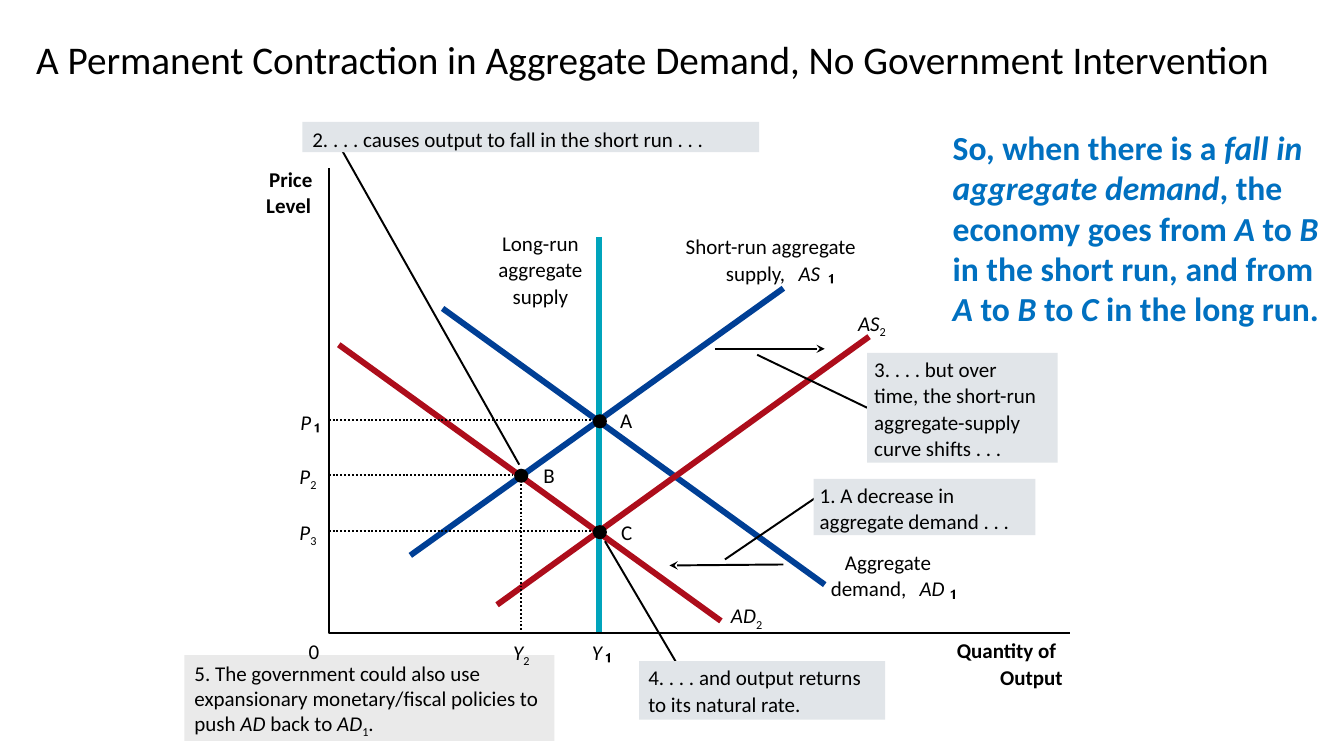
from lxml import etree
from pptx import Presentation
from pptx.dml.color import RGBColor
from pptx.enum.dml import MSO_LINE
from pptx.enum.shapes import MSO_CONNECTOR, MSO_SHAPE
from pptx.enum.text import MSO_ANCHOR, MSO_AUTO_SIZE, PP_ALIGN
from pptx.oxml.ns import qn
from pptx.util import Inches, Pt

BLACK, TEAL, BLUE, RED = "000000", "00A4BC", "003F95", "AD0D1B"
GREY, LIGHT_GREY, BRIGHT_BLUE = "E1E5E9", "EAEAEA", "0070C0"
AXIS_X, AXIS_Y = 3.26, 6.28
LINE_STEP = 19
CURVE_WIDTH = 4.25


def color(hex_string):
    return RGBColor.from_string(hex_string)


class Diagram:
    font_name = "Calibri"
    font_size = 15
    line_width = 1.38

    def __init__(self, slide):
        self.slide = slide

    def add_lines(self, frame, lines, size=font_size, text_color=BLACK, bold=False,
                  spacing=None, align=PP_ALIGN.LEFT):
        """Fill the frame; each line is a string or a list of (text, style), style "", "i" or "sub"."""
        for index, line in enumerate(lines):
            paragraph = frame.paragraphs[0] if index == 0 else frame.add_paragraph()
            paragraph.alignment = align
            if spacing:
                paragraph.line_spacing = spacing
            for text, style in [(line, "")] if isinstance(line, str) else line:
                run = paragraph.add_run()
                run.text = text
                run.font.name = self.font_name
                run.font.size = Pt(size)
                run.font.bold = bold
                run.font.italic = style == "i"
                run.font.color.rgb = color(text_color)
                if style == "sub":
                    run._r.get_or_add_rPr().set("baseline", "-25000")

    def text_box(self, left, top, width, height, lines, anchor=MSO_ANCHOR.TOP, **style):
        shape = self.slide.shapes.add_textbox(*map(Inches, (left, top, width, height)))
        frame = shape.text_frame
        frame.word_wrap = True
        frame.vertical_anchor = anchor
        self.add_lines(frame, lines, **style)

    def label(self, left, top, width, *lines, **style):
        """Unwrapped text without margins."""
        shape = self.slide.shapes.add_textbox(
            Inches(left), Inches(top), Inches(width), Inches(0.25 * len(lines)))
        frame = shape.text_frame
        frame.margin_left = frame.margin_top = frame.margin_right = frame.margin_bottom = 0
        frame.word_wrap = False
        frame.auto_size = MSO_AUTO_SIZE.SHAPE_TO_FIT_TEXT
        self.add_lines(frame, lines, **style)

    def line(self, start, end, line_color=BLACK, width=line_width, dotted=False, arrow=False):
        connector = self.slide.shapes.add_connector(
            MSO_CONNECTOR.STRAIGHT, *map(Inches, (*start, *end)))
        connector.line.color.rgb = color(line_color)
        connector.line.width = Pt(width)
        if dotted:
            connector.line.dash_style = MSO_LINE.ROUND_DOT
        if arrow:
            outline = connector._element.spPr.find(qn("a:ln"))
            etree.SubElement(outline, qn("a:tailEnd"), type="stealth")
        etree.SubElement(connector._element.spPr, qn("a:effectLst"))
        return connector

    def outline(self, points, closed=False):
        points = [(Inches(x), Inches(y)) for x, y in points]
        builder = self.slide.shapes.build_freeform(*points[0], scale=1.0)
        builder.add_line_segments(points[1:], close=closed)
        shape = builder.convert_to_shape()
        shape.shadow.inherit = False
        return shape

    def path_line(self, points, dotted=False):
        shape = self.outline(points)
        shape.fill.background()
        shape.line.color.rgb = color(BLACK)
        shape.line.width = Pt(self.line_width)
        if dotted:
            shape.line.dash_style = MSO_LINE.ROUND_DOT

    def subscript_one(self, left, top):
        """Small drawn numeral 1 used as a subscript."""
        numeral = [(0.04, 0), (0.03, 0), (0.02, 0.01), (0, 0.02), (0, 0.03),
                   (0.01, 0.03), (0.02, 0.02), (0.02, 0.09), (0.04, 0.09)]
        shape = self.outline([(left + x, top + y) for x, y in numeral], closed=True)
        shape.fill.solid()
        shape.fill.fore_color.rgb = color(BLACK)
        shape.line.fill.background()

    def filled(self, preset, left, top, width, height, fill):
        shape = self.slide.shapes.add_shape(preset, *map(Inches, (left, top, width, height)))
        shape.shadow.inherit = False
        shape.fill.solid()
        shape.fill.fore_color.rgb = color(fill)
        shape.line.fill.background()
        return shape

    def note(self, box, lines, fill=GREY, inset=(0.1, 0.05), spacing=None):
        shape = self.filled(MSO_SHAPE.RECTANGLE, *box, fill)
        frame = shape.text_frame
        frame.word_wrap = True
        frame.vertical_anchor = MSO_ANCHOR.TOP
        frame.margin_left, frame.margin_top = map(Inches, inset)
        frame.margin_bottom = 0
        self.add_lines(frame, lines, spacing=spacing)
        return shape

    def callout(self, box, lines, start, end, inset, joined_side=None):
        pointer = self.line(start, end)
        shape = self.note(box, lines, inset=inset, spacing=Pt(LINE_STEP))
        if joined_side is not None:
            pointer.begin_connect(shape, joined_side)

    def equilibrium(self, name, x, y, name_left, name_top):
        self.filled(MSO_SHAPE.OVAL, x - 0.07, y - 0.07, 0.14, 0.14, BLACK)
        self.label(name_left, name_top, 0.12, name)


def main():
    presentation = Presentation()
    presentation.slide_width, presentation.slide_height = Inches(13.33), Inches(7.5)
    diagram = Diagram(presentation.slides.add_slide(presentation.slide_layouts[6]))

    diagram.note((1.83, 6.5, 3.67, 0.85), [[
        ("5. The government could also use expansionary monetary/fiscal policies to push ", ""),
        ("AD", "i"), (" back to ", ""), ("AD", "i"), ("1", "sub"), (".", "")]], fill=LIGHT_GREY)
    diagram.text_box(
        0.26, 0.25, 12.87, 0.75,
        ["A Permanent Contraction in Aggregate Demand, No Government Intervention"],
        anchor=MSO_ANCHOR.MIDDLE, size=28, spacing=0.8)

    # Axes
    diagram.line((5.94, 2.35), (5.94, AXIS_Y), TEAL, CURVE_WIDTH)
    diagram.path_line([(AXIS_X, 1.67), (AXIS_X, AXIS_Y), (10.61, AXIS_Y)])
    for left, top, width, text in [
            (9.49, 6.32, 1, "Quantity of"), (9.92, 6.59, 0.63, "Output"),
            (2.67, 1.65, 0.43, "Price"), (2.64, 1.91, 0.45, "Level")]:
        diagram.label(left, top, width, text, bold=True)
    diagram.label(3.06, 6.33, 0.11, "0")

    # Curves and shift arrows
    for start, end, curve_color in [
            ((4.07, 5.51), (7.77, 2.86), BLUE), ((8.18, 5.8), (4.39, 3.06), BLUE),
            ((7.15, 6.16), (3.36, 3.42), RED), ((4.93, 6), (8.62, 3.34), RED)]:
        diagram.line(start, end, curve_color, CURVE_WIDTH)
    diagram.line((7.09, 3.46), (8.18, 3.46), arrow=True)
    diagram.line((7.77, 5.6), (6.64, 5.61), arrow=True)

    # Curve names
    diagram.label(4.94, 2.27, 0.84, "Long-run", "aggregate", "supply",
                  spacing=Pt(LINE_STEP), align=PP_ALIGN.CENTER)
    for left, top, width, text in [
            (6.8, 2.32, 1.71, "Short-run aggregate"), (7.2, 2.58, 0.64, "supply,"),
            (8.38, 5.45, 0.86, "Aggregate"), (8.24, 5.71, 0.8, "demand,")]:
        diagram.label(left, top, width, text)

    # Symbols with a drawn subscript, then symbols with a typed one
    for left, top, width, symbol, one_left, one_top in [
            (7.92, 2.58, 0.22, "AS", 8.22, 2.72), (9.12, 5.71, 0.25, "AD", 9.43, 5.85),
            (2.98, 4.06, 0.11, "P", 3.12, 4.2), (5.87, 6.34, 0.1, "Y", 6.01, 6.48)]:
        diagram.label(left, top, width, [(symbol, "i")])
        diagram.subscript_one(one_left, one_top)
    for left, top, width, symbol, number in [
            (7.25, 5.98, 0.32, "AD", "2"), (8.51, 3.08, 0.29, "AS", "2"),
            (2.97, 4.6, 0.18, "P", "2"), (2.97, 5.15, 0.18, "P", "3"),
            (5.09, 6.34, 0.17, "Y", "2")]:
        diagram.label(left, top, width, [(symbol, "i"), (number, "sub")])

    # Guides and callouts
    for price in (4.17, 5.27):
        diagram.line((AXIS_X, price), (5.94, price), dotted=True)
    diagram.path_line([(AXIS_X, 4.71), (5.17, 4.71), (5.17, AXIS_Y)], dotted=True)
    diagram.callout((8.07, 4.75, 2.2, 0.56), ["1. A decrease in", "aggregate demand . . ."],
                    (8.13, 4.91), (7.19, 5.55), (0.06, 0.02))
    diagram.callout((3, 1.21, 4.53, 0.3),
                    ["2. . . . causes output to fall in the short run . . ."],
                    (3.38, 1.47), (5.15, 4.61), (0.1, 0.03))
    diagram.callout((8.6, 3.5, 1.89, 1.09),
                    ["3. . . . but over", "time, the short-run",
                     "aggregate-supply", "curve shifts . . ."],
                    (8.6, 4.04), (7.51, 3.52), (0.07, 0.02), joined_side=1)
    diagram.callout((6.34, 6.56, 2.44, 0.58),
                    ["4. . . . and output returns", "to its natural rate."],
                    (6.7, 6.56), (6, 5.37), (0.09, 0.02))

    for name, x, y, name_left, name_top in [
            ("A", 5.95, 4.18, 6.15, 4.04), ("B", 5.17, 4.72, 5.39, 4.59),
            ("C", 5.95, 5.28, 6.16, 5.15)]:
        diagram.equilibrium(name, x, y, name_left, name_top)

    diagram.text_box(9.35, 1.21, 3.89, 2.12, [[
        ("So, when there is a ", ""), ("fall in aggregate demand", "i"),
        (", the economy goes from ", ""), ("A", "i"), (" to ", ""), ("B", "i"),
        (" in the short run, and from ", ""), ("A", "i"), (" to ", ""), ("B ", "i"),
        ("to ", ""), ("C", "i"), (" in the long run.", "")]],
        size=24, text_color=BRIGHT_BLUE, bold=True)

    presentation.save("out.pptx")


if __name__ == "__main__":
    main()
